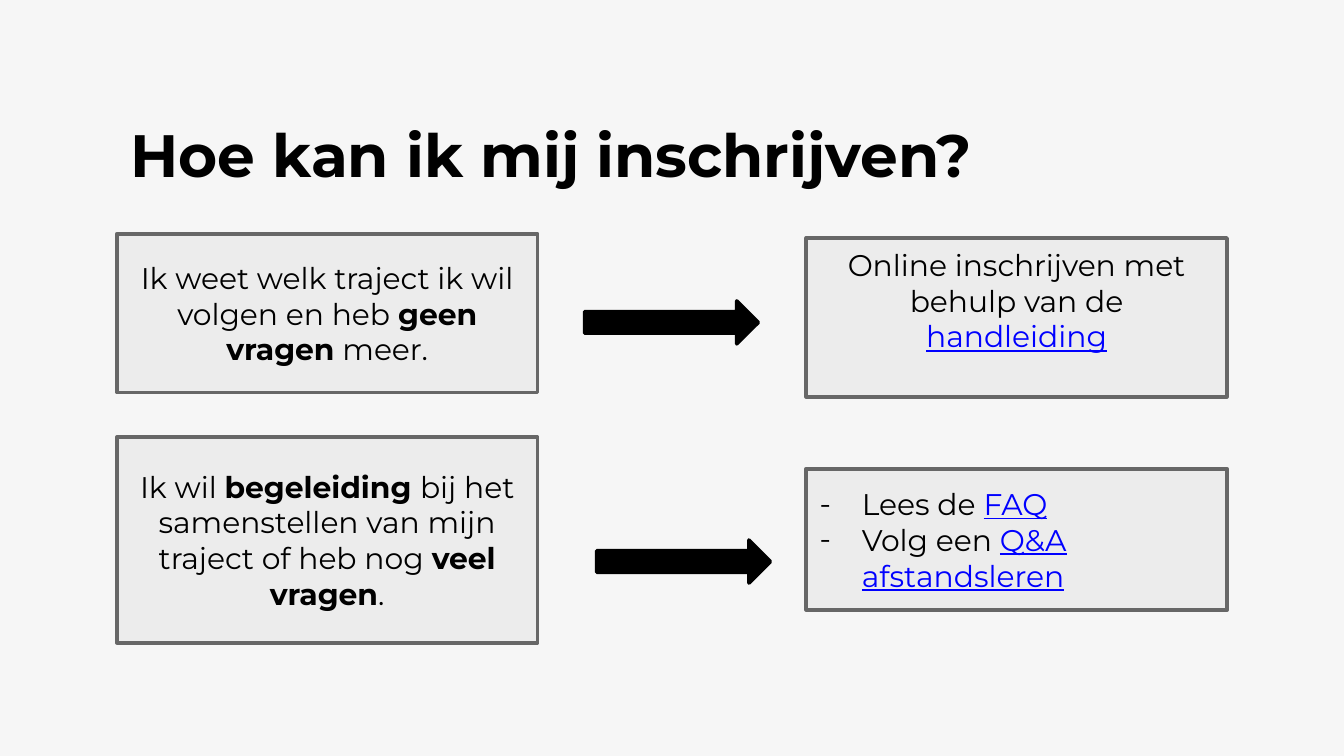
from pptx import Presentation
from pptx.dml.color import RGBColor as Rgb
from pptx.enum.shapes import MSO_SHAPE as Form
from pptx.enum.text import MSO_ANCHOR as Anchor, PP_ALIGN as Align
from pptx.oxml.ns import qn
from pptx.util import Cm, Pt
from lxml.etree import SubElement

COLOR = {"back": "F6F6F6", "box": "ECECEC", "edge": "676767",
         "text": "000000", "link": "0000FF"}


def write(shape, paras, size=16, align=Align.CENTER, anchor=Anchor.MIDDLE,
          top=0.25, dash=False):
    """Fill a shape with paragraphs of (text, style) runs; style: "", "b" or "u"."""
    frame = shape.text_frame
    frame.word_wrap = True
    frame.vertical_anchor = anchor
    frame.margin_left = frame.margin_right = Cm(0.25)
    frame.margin_top, frame.margin_bottom = Cm(top), Cm(0.25)
    for i, runs in enumerate(paras):
        para = frame.add_paragraph() if i else frame.paragraphs[0]
        para.alignment = align
        if dash:
            props = para._p.get_or_add_pPr()
            props.set("marL", str(Cm(0.8)))
            props.set("indent", str(-Cm(0.8)))
            SubElement(props, qn("a:buFont"), typeface="Montserrat")
            SubElement(props, qn("a:buChar"), char="-")
        for text, style in runs:
            run = para.add_run()
            run.text = text
            font = run.font
            font.name, font.size = "Montserrat", Pt(size)
            font.bold = style == "b"
            font.underline = style == "u"
            tint = "link" if style == "u" else "text"
            font.color.rgb = Rgb.from_string(COLOR[tint])


def draw(form, x, y, w, h, fill, edge):
    shape = slide.shapes.add_shape(form, Cm(x), Cm(y), Cm(w), Cm(h))
    shape.shadow.inherit = False
    shape.fill.solid()
    shape.fill.fore_color.rgb = Rgb.from_string(COLOR[fill])
    shape.line.color.rgb = Rgb.from_string(COLOR[edge])
    shape.line.width = Pt(2)
    return shape


deck = Presentation()
deck.slide_width, deck.slide_height = Cm(25.4), Cm(14.29)
slide = deck.slides.add_slide(deck.slide_layouts[6])
slide.background.fill.solid()
slide.background.fill.fore_color.rgb = Rgb.from_string(COLOR["back"])

left, right, width = 2.21, 15.24, 7.95

title = slide.shapes.add_textbox(Cm(left), Cm(2.06), Cm(17.6), Cm(1.7))
write(title, [[("Hoe kan ik mij inschrijven?", "b")]], size=32, align=Align.LEFT)

boxes = [
    (left, 4.42, 3, [[("Ik weet welk traject ik wil volgen en heb ", ""),
                      ("geen vragen", "b"), (" meer.", "")]], {}),
    (left, 8.26, 3.89, [[("Ik wil ", ""), ("begeleiding ", "b"),
                         ("bij het samenstellen van mijn traject of heb nog ", ""),
                         ("veel vragen", "b"), (".", "")]], {}),
    (right, 4.5, 3, [[("Online inschrijven met behulp van de ", ""),
                      ("handleiding", "u")]],
     {"anchor": Anchor.TOP, "top": 0.16}),
    (right, 8.86, 2.67, [[("Lees de ", ""), ("FAQ", "u")],
                         [("Volg een ", ""), ("Q&A afstandsleren", "u")]],
     {"align": Align.LEFT, "dash": True}),
]
for x, y, h, paras, form in boxes:
    write(draw(Form.RECTANGLE, x, y, width, h, "box", "edge"), paras, **form)

for x, y in [(11.28, 10.21), (11.05, 5.69)]:
    draw(Form.RIGHT_ARROW, x, y, 3.28, 0.81, "text", "text")

deck.save("out.pptx")
